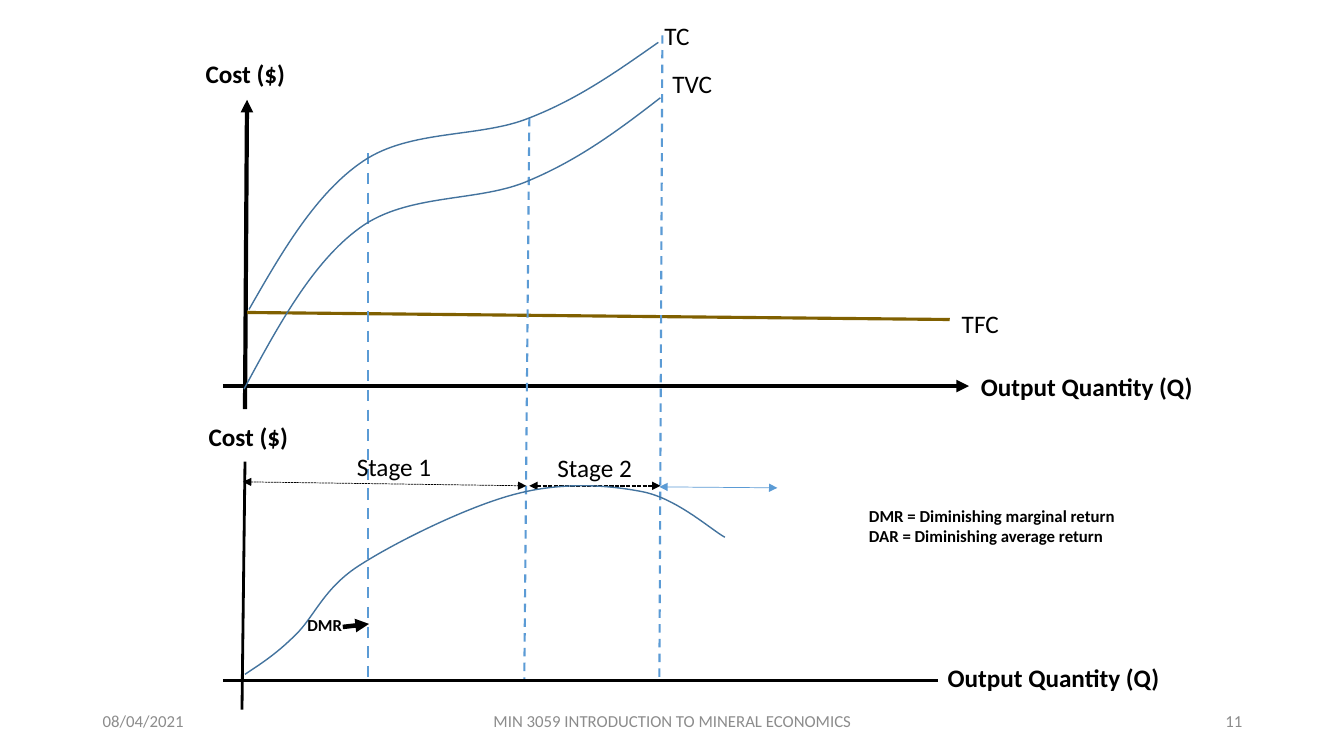
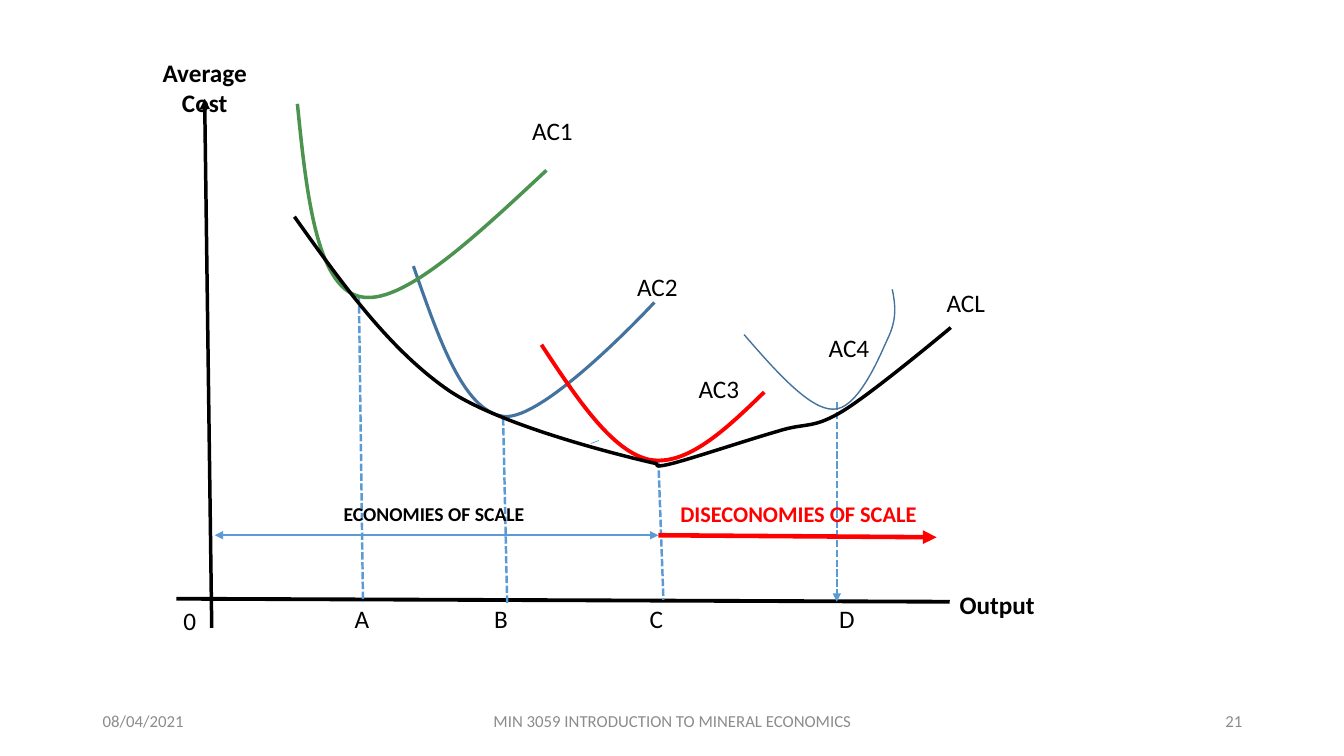
import lxml.etree
import pptx
import pptx.dml.color
import pptx.enum.dml
import pptx.enum.shapes
import pptx.enum.text
import pptx.oxml.ns
import pptx.util

RGBColor = pptx.dml.color.RGBColor
BLACK = RGBColor(0, 0, 0)
GREY = RGBColor(0x8C, 0x8C, 0x8C)
BLUE = RGBColor(0x5B, 0x9B, 0xD5)
DARK_BLUE = RGBColor(0x43, 0x73, 0x9E)
OLIVE = RGBColor(0x80, 0x60, 0x00)
GREEN = RGBColor(0x4B, 0x93, 0x4E)
RED = RGBColor(0xFF, 0, 0)

FONT = "Calibri"
LEFT, CENTER, RIGHT = (pptx.enum.text.PP_ALIGN.LEFT, pptx.enum.text.PP_ALIGN.CENTER,
                       pptx.enum.text.PP_ALIGN.RIGHT)
TOP, MIDDLE = pptx.enum.text.MSO_ANCHOR.TOP, pptx.enum.text.MSO_ANCHOR.MIDDLE
SOLID = None
DASH = pptx.enum.dml.MSO_LINE.DASH
FINE = pptx.enum.dml.MSO_LINE.SQUARE_DOT
END, BOTH = ("tailEnd",), ("headEnd", "tailEnd")
qn = pptx.oxml.ns.qn

prs = pptx.Presentation()
prs.slide_width = pptx.util.Inches(13.33)
prs.slide_height = pptx.util.Inches(7.5)
CELL = prs.slide_height / 75  # square grid, 75 rows high


def style_line(sp, color, width, dash=SOLID, arrows=()):
    """Set stroke and arrowheads, and switch the theme shadow off."""
    sp.line.color.rgb = color
    sp.line.width = pptx.util.Pt(width)
    if dash:
        sp.line.dash_style = dash
    sp_pr = sp._element.spPr
    for end in arrows:
        lxml.etree.SubElement(sp_pr.find(qn("a:ln")), qn("a:" + end), type="triangle")
    lxml.etree.SubElement(sp_pr, qn("a:effectLst"))


def add_text(s, text, box, size=18, bold=False, color=BLACK, align=LEFT, anchor=TOP):
    """Add a text box; box is left, top, width and height in grid cells."""
    tf = s.shapes.add_textbox(*(round(v * CELL) for v in box)).text_frame
    tf.word_wrap = True
    tf.vertical_anchor = anchor
    tf.text = text
    for p in tf.paragraphs:
        p.alignment = align
        for r in p.runs:
            r.font.name = FONT
            r.font.size = pptx.util.Pt(size)
            r.font.bold = bold
            r.font.color.rgb = color


# Lines: start, end, colour, width, dash, arrowheads.
# Curves: colour, width, then a start point followed by Bézier triplets.
# Labels: text, box, then any changes to the default text style.
production_stages = {
    "number": "11",
    "lines": [
        ((24.3, 40.6), (24.5, 9.9), BLACK, 3, SOLID, END),
        ((22.1, 38.3), (96.1, 38.3), BLACK, 3, SOLID, END),
        ((24.5, 31), (94.2, 31.7), OLIVE, 2.25),
        ((36.5, 15.2), (36.5, 67.5), BLUE, 2, DASH),
        ((52.5, 11.7), (52, 67.5), BLUE, 1.5, DASH),
        ((65.7, 3.5), (65.4, 67.5), BLUE, 1.5, DASH),
        ((24.3, 45.8), (24, 70.4), BLACK, 2),
        ((22.1, 67.5), (93, 67.5), BLACK, 2),
        ((34, 62.2), (36.6, 61.9), BLACK, 3.25, SOLID, END),
        ((24.1, 47.8), (52.2, 48.2), BLACK, 0.5, FINE, BOTH),
        ((52.5, 48.2), (65.5, 48.2), BLACK, 1, FINE, BOTH),
        ((65.4, 48.3), (77.1, 48.4), BLUE, 0.5, SOLID, BOTH),
    ],
    "curves": [
        (DARK_BLUE, 1, [(24.2, 38.6), (27.6, 32.3), (31, 26), (35.7, 22.6),
                        (40.5, 19.1), (47.6, 20.1), (52.5, 17.9),
                        (57.5, 15.8), (61.5, 12.8), (65.5, 9.7)]),
        (DARK_BLUE, 1, [(24.7, 30.7), (28, 24.9), (31.4, 19.1), (36, 16),
                        (40.7, 12.8), (47.6, 13.7), (52.5, 11.7),
                        (57.4, 9.8), (61.3, 7), (65.3, 4.2)]),
        (DARK_BLUE, 1, [(24.3, 66.9), (25.8, 65.9), (27.4, 64.9), (29.3, 63),
                        (31.2, 61.2), (32.1, 58.3), (35.8, 56),
                        (39.4, 53.7), (46.5, 50.2), (51.2, 49),
                        (55.8, 47.8), (60.3, 48.1), (63.8, 48.8),
                        (67.2, 49.5), (70.6, 52.6), (71.9, 53.3)]),
    ],
    "labels": [
        ("Cost ($)", (19.4, 5.3, 17.1, 4.2), {"bold": True}),
        ("Cost ($)", (19.7, 41.3, 17.1, 4.2), {"bold": True}),
        ("Output Quantity (Q)", (96.3, 36.3, 25.8, 4), {"bold": True}),
        ("Output Quantity (Q)", (93, 65.2, 25.8, 4), {"bold": True}),
        ("TC", (64.9, 1.5, 16.6, 4), {}),
        ("TVC", (65.7, 6.3, 12.5, 4), {}),
        ("TFC", (94.4, 30.1, 10.8, 4), {}),
        ("Stage 1", (34.4, 44.3, 10.2, 4), {}),
        ("Stage 2", (54.3, 44.4, 10.4, 4), {}),
        ("DMR", (29.5, 60.5, 6.2, 3), {"size": 12, "bold": True}),
        ("DMR = Diminishing marginal return\nDAR = Diminishing average return",
         (85.2, 49.7, 28.5, 5), {"size": 12, "bold": True}),
    ],
}

economies_of_scale = {
    "number": "21",
    "lines": [
        ((17.5, 59.4), (94.2, 59.7), BLACK, 2.75),
        ((21, 62.3), (20.3, 9.8), BLACK, 2.5, SOLID, END),
        ((35.6, 29.4), (36, 59.7), BLUE, 1.75, FINE),
        ((50.3, 59.8), (49.9, 41.3), BLUE, 1.75, FINE),
        ((65.3, 45.7), (65.8, 59.5), BLUE, 1.75, FINE),
        ((83, 39.9), (83, 59.7), BLUE, 1.75, FINE, END),
        ((58.6, 44), (59.4, 43.7), BLUE, 0.5),
        ((21.3, 53.1), (65.3, 53.1), BLUE, 1.75, SOLID, BOTH),
        ((65.3, 53.1), (92.9, 53.3), RED, 3.25, SOLID, END),
    ],
    "curves": [
        (DARK_BLUE, 2.25, [(41, 26.4), (43.5, 33.5), (45.9, 40.7), (49.9, 41.3),
                           (53.9, 41.9), (64.9, 30), (64.9, 30)]),
        (RED, 2.75, [(53.7, 34.2), (57.2, 39.5), (60.7, 44.8), (64.4, 45.6),
                     (68.1, 46.3), (72, 42.6), (75.8, 38.9)]),
        (GREEN, 2.5, [(29.5, 10.3), (30.4, 19.3), (31.4, 28.3), (35.6, 29.4),
                      (39.7, 30.5), (46.9, 23.7), (54.2, 16.9)]),
        (DARK_BLUE, 1, [(73.8, 33.2), (77, 36.9), (80.3, 40.6), (82.6, 40.6),
                        (85, 40.7), (87.1, 35.7), (88, 33.7),
                        (89, 31.7), (88.8, 30.2), (88.5, 28.7)]),
        (BLACK, 2.5, [(29.2, 21.5), (33.9, 28.1), (38.6, 34.7), (44.6, 38.8),
                      (50.6, 42.8), (65.1, 46), (65.1, 46),
                      (65.3, 46), (64.6, 46.5), (66.6, 46),
                      (68.6, 45.5), (74.3, 43.6), (77.1, 42.8),
                      (79.9, 41.9), (80.5, 42.6), (83.4, 40.9),
                      (86.3, 39.2), (94.3, 32.5), (94.3, 32.5)]),
    ],
    "labels": [
        ("Average Cost", (15, 5.2, 10.6, 7.1), {"bold": True, "align": CENTER}),
        ("Output", (94.2, 58, 10.4, 4), {"bold": True}),
        ("0", (17.2, 59.6, 4.2, 4), {}),
        ("AC1", (51.8, 10.9, 6.8, 4), {}),
        ("AC2", (62.2, 26.4, 9.5, 4), {}),
        ("AC3", (68.3, 36.5, 6.2, 4), {}),
        ("AC4", (81.2, 32.5, 6.2, 4), {}),
        ("ACL", (92.9, 28, 9.8, 4), {}),
        ("ECONOMIES OF SCALE", (33.1, 49.3, 24, 3.4), {"size": 14, "bold": True}),
        ("DISECONOMIES OF SCALE", (66.5, 49.1, 27, 3.7),
         {"size": 16, "bold": True, "color": RED}),
    ] + [(name, (middle - 2, 59.4, 4, 4), {"align": CENTER})
         for name, middle in zip("ABCD", (35.9, 49.7, 65.1, 84))],
}

for diagram in (production_stages, economies_of_scale):
    s = prs.slides.add_slide(prs.slide_layouts[6])

    for text, left, width, align in (
            ("08/04/2021", 9.2, 30, LEFT),
            ("MIN 3059 INTRODUCTION TO MINERAL ECONOMICS", 44.2, 45, CENTER),
            (diagram["number"], 94.2, 30, RIGHT)):
        add_text(s, text, (left, 69.5, width, 4), 12, color=GREY, align=align, anchor=MIDDLE)

    for start, end, *stroke in diagram["lines"]:
        sp = s.shapes.add_connector(pptx.enum.shapes.MSO_CONNECTOR.STRAIGHT,
                                    *(round(v * CELL) for v in start + end))
        style_line(sp, *stroke)

    for color, width, points in diagram["curves"]:
        builder = s.shapes.build_freeform(*points[0], scale=CELL)
        # Local units are scaled up so that tenths of a cell survive rounding.
        builder = s.shapes.build_freeform(*(round(v * CELL) for v in points[0]))
        builder.add_line_segments([(round(x * CELL), round(y * CELL)) for x, y in points[1:]],
                                  close=False)
        sp = builder.convert_to_shape()
        sp.fill.background()
        style_line(sp, color, width)
        # Every three straight segments become one cubic curve.
        outline = next(sp._element.iter(qn("a:path")))
        segments = outline.findall(qn("a:lnTo"))
        for i in range(0, len(segments), 3):
            cubic = lxml.etree.SubElement(outline, qn("a:cubicBezTo"))
            for segment in segments[i:i + 3]:
                cubic.append(segment[0])
                outline.remove(segment)

    for text, box, style in diagram["labels"]:
        add_text(s, text, box, **style)

prs.save("out.pptx")
